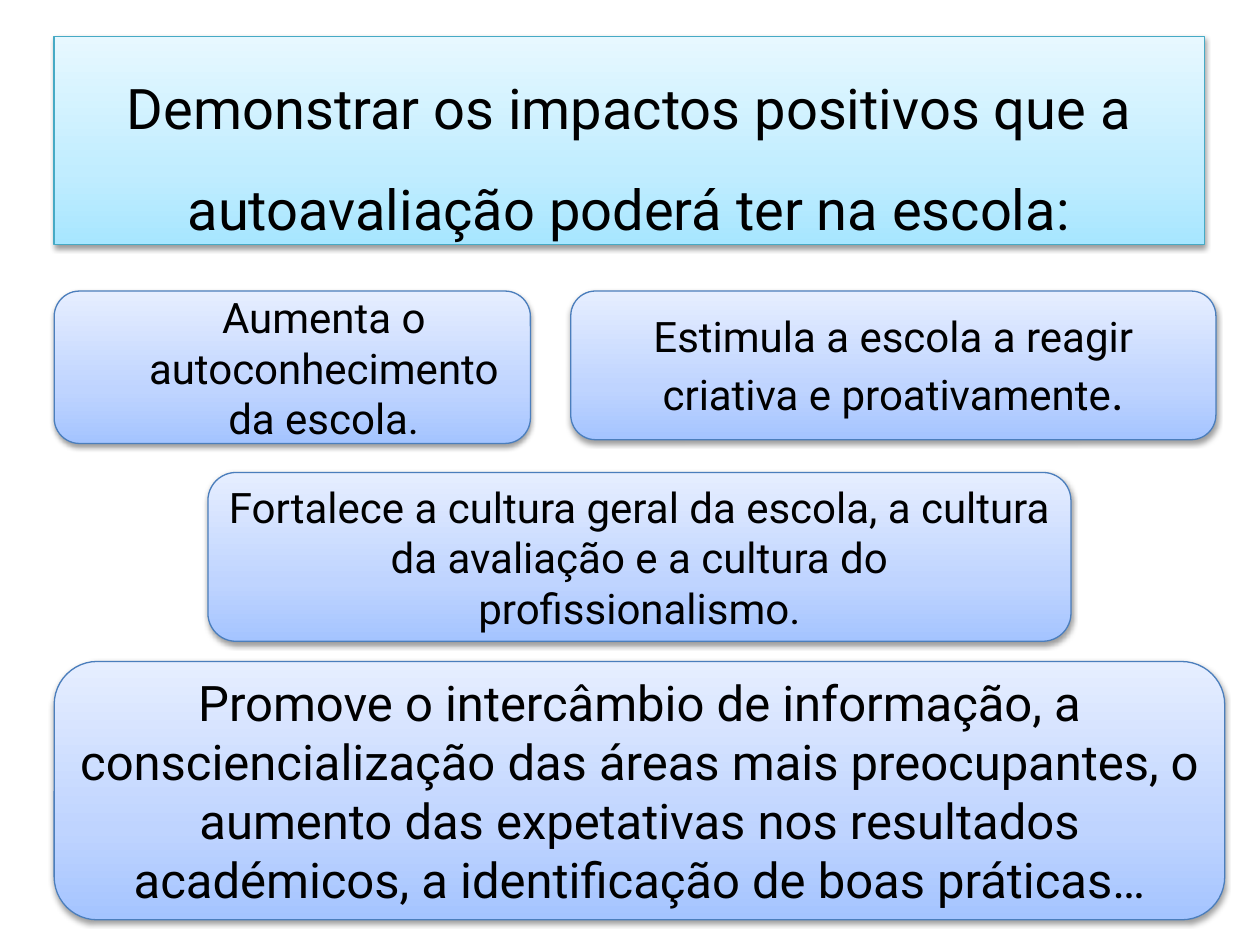
from dataclasses import dataclass

from lxml import etree
from pptx import Presentation
from pptx.dml.color import RGBColor
from pptx.enum.shapes import MSO_SHAPE
from pptx.enum.text import MSO_ANCHOR, PP_ALIGN
from pptx.oxml.ns import qn
from pptx.util import Inches, Pt

RECT = MSO_SHAPE.RECTANGLE
ROUND = MSO_SHAPE.ROUNDED_RECTANGLE
MIDDLE = MSO_ANCHOR.MIDDLE
CENTER = PP_ALIGN.CENTER

FONT = "Roboto"
BLACK = RGBColor(0x00, 0x00, 0x00)
TEAL = RGBColor(0x46, 0xAA, 0xC5)
BLUE = RGBColor(0x4B, 0x7E, 0xBC)
# Gradient colours, from the bottom edge to the top
AQUA = (RGBColor(0xA7, 0xE6, 0xFF), RGBColor(0xC1, 0xED, 0xFF), RGBColor(0xE7, 0xF8, 0xFF))
SKY = (RGBColor(0xA4, 0xC4, 0xFF), RGBColor(0xBF, 0xD4, 0xFF), RGBColor(0xE6, 0xEE, 0xFF))
STOPS = (0, 35, 100)
LEFT = 0.43
ROW = 2.31


@dataclass
class Box:
    left: float
    top: float
    width: float
    height: float
    text: str
    size: int = 24
    form: MSO_SHAPE = ROUND
    fill: tuple = SKY
    line: RGBColor = BLUE
    space: float | None = None
    before: int = 0
    indent: float = 0
    end: str = ""


BOXES = [
    Box(LEFT, 0.29, 9.13, 1.65,
        "Demonstrar os impactos positivos que a autoavaliação poderá ter na escola:",
        size=32, form=RECT, fill=AQUA, line=TEAL, space=1.5, before=20),
    Box(LEFT, ROW, 3.78, 1.21, "Aumenta o autoconhecimento da escola.",
        before=20, indent=0.5),
    Box(1.65, 3.75, 6.85, 1.34,
        "Fortalece a cultura geral da escola, a cultura da avaliação "
        "e a cultura do profissionalismo."),
    Box(4.53, ROW, 5.12, 1.18,
        "Estimula a escola a reagir criativa e proativamente", end="."),
    Box(LEFT, 5.25, 9.29, 2.05,
        "Promove o intercâmbio de informação, a consciencialização das áreas "
        "mais preocupantes, o aumento das expetativas nos resultados "
        "académicos, a identificação de boas práticas…", size=28),
]


def add(parent, tag: str, **attrs):
    """Append a drawing element with the given attributes."""
    return etree.SubElement(parent, qn(tag), {k: str(v) for k, v in attrs.items()})


def shade(shape, colors: tuple) -> None:
    """Fill with a gradient that rises from the bottom edge."""
    shape.fill.gradient()
    shape.fill.gradient_angle = 90
    stops = shape._element.spPr.find(".//" + qn("a:gsLst"))
    for old in list(stops):
        stops.remove(old)
    for pos, color in zip(STOPS, colors):
        add(add(stops, "a:gs", pos=pos * 1000), "a:srgbClr", val=color)


def shadow(shape) -> None:
    """Drop a soft black shadow straight down."""
    shape.shadow.inherit = False
    effects = shape._element.spPr.find(qn("a:effectLst"))
    outer = add(effects, "a:outerShdw", blurRad=Pt(3.15), dist=Pt(1.57),
                dir=5400000, rotWithShape=0)
    add(add(outer, "a:srgbClr", val=BLACK), "a:alpha", val=38000)


def write(para, text: str, *, size: int, color: RGBColor = BLACK) -> None:
    run = para.add_run()
    run.text = text
    run.font.name = FONT
    run.font.size = Pt(size)
    run.font.color.rgb = color


def draw(slide, box: Box) -> None:
    place = [Inches(n) for n in (box.left, box.top, box.width, box.height)]
    shape = slide.shapes.add_shape(box.form, *place)
    shade(shape, box.fill)
    shape.line.color.rgb = box.line
    shape.line.width = Pt(0.75)
    shadow(shape)

    # Text and its paragraph format
    frame = shape.text_frame
    frame.word_wrap = True
    frame.vertical_anchor = MIDDLE
    para = frame.paragraphs[0]
    para.alignment = CENTER
    if box.space:
        para.line_spacing = box.space
    props = para._p.get_or_add_pPr()
    if box.before:
        add(add(props, "a:spcBef"), "a:spcPct", val=box.before * 1000)
    if box.indent:
        para.level = 1
        props.set("marL", str(Inches(box.indent)))
        props.set("indent", "0")
    write(para, box.text, size=box.size)
    if box.end:
        write(para, box.end, size=28)


def main() -> None:
    deck = Presentation()
    deck.slide_width = Inches(10)
    deck.slide_height = Inches(7.5)
    slide = deck.slides.add_slide(deck.slide_layouts[6])
    for box in BOXES:
        draw(slide, box)
    deck.save("out.pptx")


if __name__ == "__main__":
    main()
